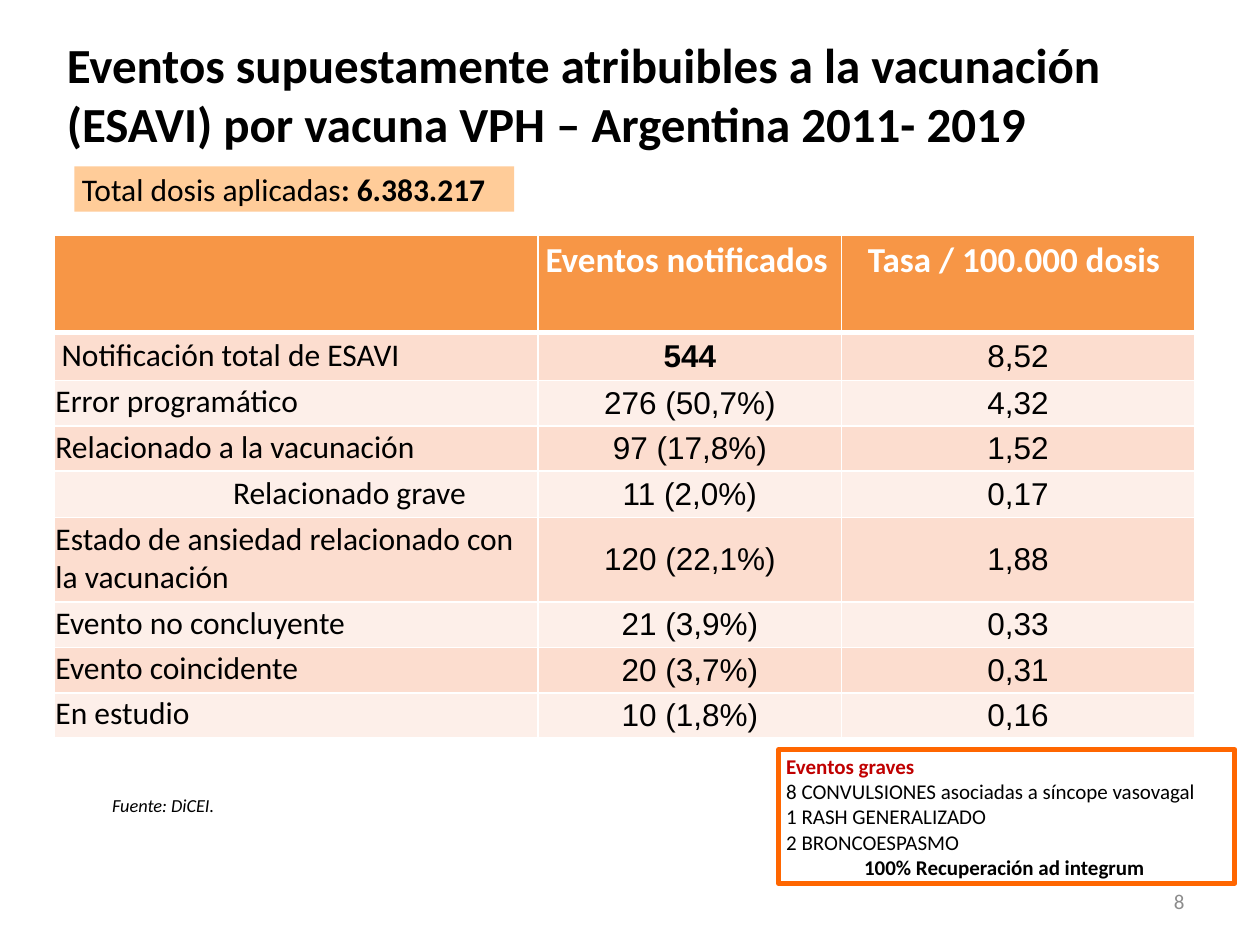
from lxml.etree import SubElement as Sub
from pptx import Presentation
from pptx.dml.color import RGBColor as Rgb
from pptx.enum.shapes import MSO_SHAPE as Kind
from pptx.enum.text import MSO_ANCHOR as Anchor, PP_ALIGN as Align
from pptx.oxml.ns import qn
from pptx.util import Inches as In, Pt

HUES = {"ink": "000000", "white": "FFFFFF", "head": "F79646", "dark": "FCDDCF",
        "light": "FDEFE9", "peach": "FFCC99", "edge": "FF6600", "red": "C00000",
        "gray": "8C8C8C"}
COLS = [3.84, 2.41, 2.8]
ROWS = [0.77, 0.38, 0.36, 0.36, 0.37, 0.67, 0.36, 0.36, 0.36]
DATA = [
    ("", "Eventos notificados", "Tasa / 100.000 dosis "),
    ("Notificación total de ESAVI", "544", "8,52"),
    ("Error programático", "276 (50,7%)", "4,32"),
    ("Relacionado a la vacunación", "97 (17,8%)", "1,52"),
    ("Relacionado grave", "11 (2,0%)", "0,17"),
    ("Estado de ansiedad relacionado con la vacunación", "120 (22,1%)", "1,88"),
    ("Evento no concluyente", "21 (3,9%)", "0,33"),
    ("Evento coincidente", "20 (3,7%)", "0,31"),
    ("En estudio", "10 (1,8%)", "0,16"),
]
GRAVE = ["Eventos graves", "8 CONVULSIONES asociadas a síncope vasovagal",
         "1 RASH GENERALIZADO", "2 BRONCOESPASMO", "100% Recuperación ad integrum "]
PAD = (0.06, 0.03, 0.06, 0.03)


def hue(name):
    """Return a named colour."""
    return Rgb.from_string(HUES[name])


def style(para, size, tint="ink", bold=False, face="Calibri", align=Align.LEFT):
    """Format a paragraph and all its runs."""
    para.alignment = align
    for run in para.runs:
        font = run.font
        font.name, font.size, font.bold = face, Pt(size), bold
        font.color.rgb = hue(tint)


def inset(item, pad):
    """Set the four margins of a cell or text frame."""
    (item.margin_left, item.margin_top,
     item.margin_right, item.margin_bottom) = map(In, pad)


def label(slide, spot, text, size, tint="ink", align=Align.LEFT):
    """Add a one-line text box and return it."""
    box = slide.shapes.add_textbox(*map(In, spot))
    frame = box.text_frame
    frame.text = text
    inset(frame, PAD)
    style(frame.paragraphs[0], size, tint, align=align)
    return box


def panel(slide, spot, fill, lines, size, edge=None):
    """Add a filled box with lines of text and return its paragraphs."""
    box = slide.shapes.add_shape(Kind.RECTANGLE, *map(In, spot))
    box.shadow.inherit = False
    box.fill.solid()
    box.fill.fore_color.rgb = hue(fill)
    if edge:
        box.line.color.rgb = hue(edge)
        box.line.width = Pt(3)
    else:
        box.line.fill.background()
    frame = box.text_frame
    frame.word_wrap = True
    frame.vertical_anchor = Anchor.TOP
    inset(frame, PAD)
    frame.text = "\n".join(lines)
    for para in frame.paragraphs:
        style(para, size)
    return frame.paragraphs


def border(cell, row):
    """Draw white cell borders, thick below the header."""
    props = cell._tc.get_or_add_tcPr()
    for side in "LRTB":
        thick = (row, side) in ((0, "B"), (1, "T"))
        line = Sub(props, qn("a:ln" + side), w=str(Pt(3 if thick else 1)))
        fill = Sub(line, qn("a:solidFill"))
        Sub(fill, qn("a:srgbClr"), val=HUES["white"])


def paint(cell, row, col):
    """Fill and format one table cell."""
    para = cell.text_frame.paragraphs[0]
    para.text = DATA[row][col]
    align = Align.CENTER if col else Align.LEFT
    if row == 0:
        inset(cell, PAD)
        style(para, 20, "white", True,
              align=Align.CENTER if col == 2 else Align.LEFT)
    else:
        cell.vertical_anchor = Anchor.MIDDLE
        left = {1: 0.06, 4: 1.42}.get(row, 0.01)
        inset(cell, (0.02, 0, 0.02, 0) if col else (left, 0.01, 0.01, 0.03))
        style(para, 18, "ink", (row, col) == (1, 1),
              "Arial" if col else "Calibri", align)
    border(cell, row)
    cell.fill.solid()
    cell.fill.fore_color.rgb = hue("head" if row == 0 else
                                   "dark" if row % 2 else "light")


def grid(slide):
    """Add the table of events."""
    table = slide.shapes.add_table(len(ROWS), len(COLS), In(0.43), In(1.87),
                                   In(sum(COLS)), In(sum(ROWS))).table
    for col, wide in enumerate(COLS):
        table.columns[col].width = In(wide)
    for row, tall in enumerate(ROWS):
        table.rows[row].height = In(tall)
        for col in range(len(COLS)):
            paint(table.cell(row, col), row, col)


def head(slide):
    """Place and format the title."""
    title = slide.shapes.title
    title.left, title.top, title.width, title.height = map(
        In, (0.43, 0.27, 8.66, 0.94))
    frame = title.text_frame
    frame.text = ("Eventos supuestamente atribuibles a la vacunación (ESAVI) "
                  "por vacuna VPH – Argentina 2011- 2019")
    frame.vertical_anchor = Anchor.MIDDLE
    style(frame.paragraphs[0], 28, bold=True)


def main():
    """Build the slide."""
    deck = Presentation()
    deck.slide_width, deck.slide_height = In(10), In(7.5)
    slide = deck.slides.add_slide(deck.slide_layouts[5])
    head(slide)
    dose = panel(slide, (0.59, 1.32, 3.49, 0.36), "peach",
                 ["Total dosis aplicadas"], 18)[0]
    dose.add_run().text = ": 6.383.217"
    style(dose, 18)
    dose.runs[1].font.bold = True
    grid(slide)
    note = label(slide, (0.83, 6.27, 0.98, 0.24), "Fuente: DiCEI.", 10.5)
    note.text_frame.paragraphs[0].runs[0].font.italic = True
    lines = panel(slide, (6.18, 5.95, 3.62, 1.06), "white", GRAVE, 12, "edge")
    style(lines[0], 12, "red", True)
    style(lines[-1], 12, bold=True, align=Align.CENTER)
    page = label(slide, (7.17, 6.95, 2.33, 0.4), "8", 12, "gray", Align.RIGHT)
    page.text_frame.vertical_anchor = Anchor.MIDDLE
    page.text_frame.margin_right = In(0.1)
    deck.save("out.pptx")


if __name__ == "__main__":
    main()
